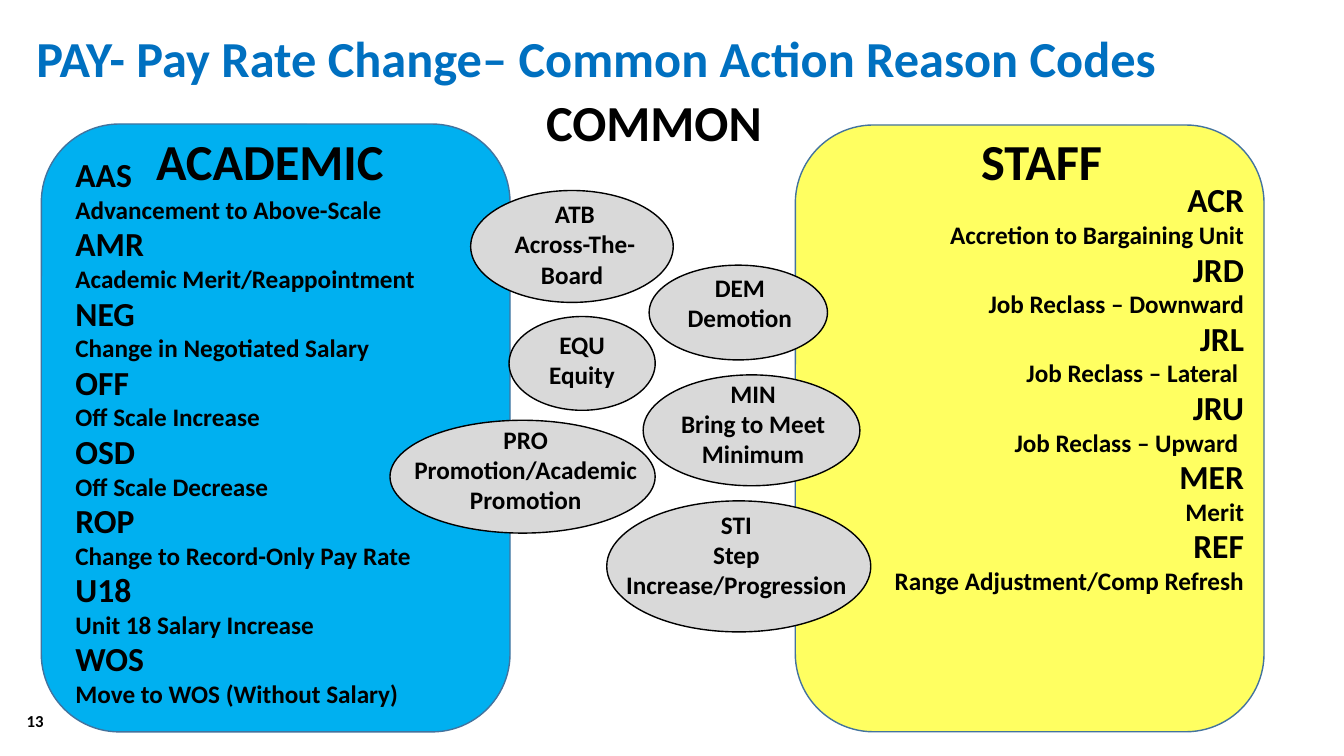
from lxml import etree
from pptx import Presentation
from pptx.dml.color import RGBColor
from pptx.enum import shapes, text
from pptx.oxml import ns
from pptx.util import Pt

LEFT, CENTER, RIGHT = text.PP_ALIGN.LEFT, text.PP_ALIGN.CENTER, text.PP_ALIGN.RIGHT

ACADEMIC = [
    ("AAS", "Advancement to Above-Scale"),
    ("AMR", "Academic Merit/Reappointment"),
    ("NEG", "Change in Negotiated Salary"),
    ("OFF", "Off Scale Increase"),
    ("OSD", "Off Scale Decrease"),
    ("ROP", "Change to Record-Only Pay Rate"),
    ("U18", "Unit 18 Salary Increase"),
    ("WOS", "Move to WOS (Without Salary)"),
]
STAFF = [
    ("ACR", "Accretion to Bargaining Unit"),
    ("JRD", "Job Reclass – Downward"),
    ("JRL", "Job Reclass – Lateral "),
    ("JRU", "Job Reclass – Upward "),
    ("MER", "Merit"),
    ("REF", "Range Adjustment/Comp Refresh"),
]
# code, meaning, ellipse box, text box (left, top, width, height)
COMMON = [
    ("ATB", "Across-The-Board ", (336.2, 136.1, 144.7, 79.9), (350.6, 138.2, 120.2, 72.7)),
    ("DEM", "Demotion", (463.7, 189.4, 127.4, 67.7), (456.5, 190.8, 144, 51)),
    ("PRO", "Promotion/Academic Promotion", (278.6, 300.2, 189.4, 80.6), (287.3, 299.5, 176.4, 72.7)),
    ("MIN", "Bring to Meet Minimum", (459.4, 267.8, 154.8, 79.2), (466.6, 266.4, 142.6, 72.7)),
    ("STI", "Step Increase/Progression", (433.4, 357.8, 188.6, 93.6), (437.8, 360, 176.4, 72.7)),
    ("EQU", "Equity", (363.6, 226.1, 104.4, 67), (344.9, 231.8, 141.8, 51)),
]


def color(value):
    return RGBColor.from_string(value)


class ReasonCodeSlide:
    font_name = "Calibri"
    ink = "000000"

    def __init__(self, presentation):
        self.slide = presentation.slides.add_slide(presentation.slide_layouts[5])

    def fill_text(self, frame, lines, alignment, ink=ink, spacing=1.0):
        """Fill a text frame with bold (text, size) lines."""
        frame.word_wrap = True
        frame.auto_size = text.MSO_AUTO_SIZE.SHAPE_TO_FIT_TEXT
        frame.vertical_anchor = text.MSO_ANCHOR.TOP
        for index, (line, size) in enumerate(lines):
            paragraph = frame.add_paragraph() if index else frame.paragraphs[0]
            paragraph.text = line
            paragraph.alignment = alignment
            paragraph.line_spacing = spacing
            paragraph.font.name = self.font_name
            paragraph.font.size = Pt(size)
            paragraph.font.bold = True
            paragraph.font.color.rgb = color(ink)

    def title(self, line, box):
        title = self.slide.shapes.title
        title.left, title.top, title.width, title.height = map(Pt, box)
        self.fill_text(title.text_frame, [(line, 36)], LEFT, "0070C0")

    def text_box(self, lines, box, alignment=LEFT, spacing=1.0, parent=None):
        shape = (parent or self.slide).shapes.add_textbox(*map(Pt, box))
        self.fill_text(shape.text_frame, lines, alignment, spacing=spacing)
        return shape

    def shape(self, kind, box, fill, line, opacity=100, parent=None):
        shape = (parent or self.slide).shapes.add_shape(kind, *map(Pt, box))
        shape.shadow.inherit = False
        shape.fill.solid()
        shape.fill.fore_color.rgb = color(fill)
        shape.line.color.rgb = color(line)
        shape.line.width = Pt(1)
        if opacity < 100:
            fill_color = shape.element.spPr.find(ns.qn("a:solidFill"))[0]
            etree.SubElement(fill_color, ns.qn("a:alpha"), val=str(opacity * 1000))

    def panel(self, box, fill, opacity=100):
        self.shape(shapes.MSO_SHAPE.ROUNDED_RECTANGLE, box, fill, "43739E", opacity)

    def code_list(self, codes, box, alignment):
        lines = [line for code, meaning in codes for line in ((code, 24), (meaning, 18))]
        self.text_box(lines, box, alignment, spacing=0.98)

    def common_code(self, code, meaning, ellipse_box, label_box):
        group = self.slide.shapes.add_group_shape()
        self.shape(shapes.MSO_SHAPE.OVAL, ellipse_box, "D9D9D9", self.ink, parent=group)
        self.text_box([(code, 18), (meaning, 18)], label_box, CENTER, parent=group)

    def page_number(self, number, box):
        shape = self.text_box([(number, 12)], box, RIGHT)
        shape.text_frame.auto_size = text.MSO_AUTO_SIZE.NONE
        shape.text_frame.vertical_anchor = text.MSO_ANCHOR.MIDDLE


def main():
    presentation = Presentation()
    presentation.slide_width, presentation.slide_height = Pt(960), Pt(540)
    slide = ReasonCodeSlide(presentation)
    slide.title("PAY- Pay Rate Change– Common Action Reason Codes", (18.7, 15.8, 924.5, 51))
    slide.panel((568.1, 89.3, 334.8, 433.4), "FFFF00", opacity=62)
    slide.panel((29.5, 88.6, 334.8, 434.2), "00B0F0")
    slide.code_list(STAFF, (561.6, 126, 334.1, 429), RIGHT)
    slide.text_box([("STAFF", 36)], (663.8, 89.3, 160.6, 51), CENTER)
    slide.text_box([("ACADEMIC", 36)], (104.4, 89.3, 185, 51))
    slide.text_box([("COMMON", 36)], (383, 61.2, 185, 51))
    for entry in COMMON:
        slide.common_code(*entry)
    slide.code_list(ACADEMIC, (46.8, 108, 333.4, 436.3), LEFT)
    slide.page_number("13", (2.9, 497.5, 35.3, 35.3))
    presentation.save("out.pptx")


if __name__ == "__main__":
    main()
